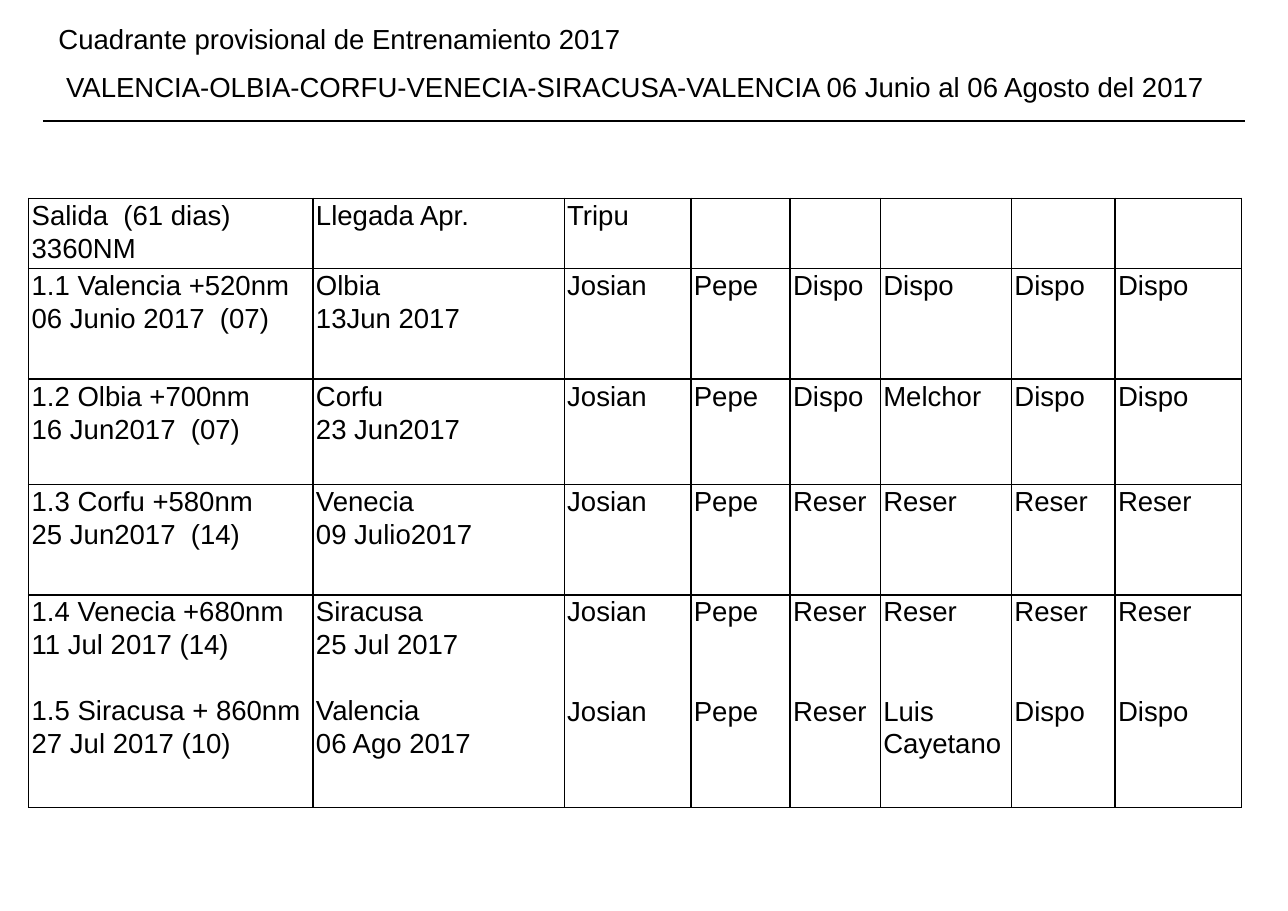
from lxml import etree
from pptx import Presentation
from pptx.dml.color import RGBColor
from pptx.enum.shapes import MSO_CONNECTOR
from pptx.enum.text import MSO_ANCHOR, MSO_AUTO_SIZE, PP_ALIGN
from pptx.oxml.ns import qn
from pptx.util import Pt

TOP, LEFT = MSO_ANCHOR.TOP, PP_ALIGN.LEFT
NO_FIT = MSO_AUTO_SIZE.NONE
STRAIGHT = MSO_CONNECTOR.STRAIGHT

WIDE, HIGH = 841.7, 595.4
BLACK = "000000"
SIZE, SPACING, PITCH = 18, 1.07, 21.6
LEG_LINES = 3

TITLE = ["Cuadrante provisional de Entrenamiento 2017",
         "VALENCIA-OLBIA-CORFU-VENECIA-SIRACUSA-VALENCIA 06 Junio al 06 Agosto del 2017"]
COLS = [185.8, 164.2, 82.8, 64.8, 59, 85.7, 67.7, 82.8]
ROWS = [46.1, 72, 69.1, 72, 139]
# Each table row holds one or more legs; each leg gives the text of its columns.
PLAN = [
    [["Salida  (61 dias)\n3360NM", "Llegada Apr.", "Tripu"]],
    [["1.1 Valencia +520nm 06 Junio 2017  (07)", "Olbia\n13Jun 2017",
      "Josian", "Pepe", "Dispo", "Dispo", "Dispo", "Dispo"]],
    [["1.2 Olbia +700nm\n16 Jun2017  (07)", "Corfu\n23 Jun2017",
      "Josian", "Pepe", "Dispo", "Melchor", "Dispo", "Dispo"]],
    [["1.3 Corfu +580nm\n25 Jun2017  (14)", "Venecia\n09 Julio2017",
      "Josian", "Pepe", "Reser", "Reser", "Reser", "Reser"]],
    [["1.4 Venecia +680nm\n11 Jul 2017 (14)", "Siracusa\n25 Jul 2017",
      "Josian", "Pepe", "Reser", "Reser", "Reser", "Reser"],
     ["1.5 Siracusa + 860nm\n27 Jul 2017 (10)", "Valencia\n06 Ago 2017",
      "Josian", "Pepe", "Reser", "Luis Cayetano", "Dispo", "Dispo"]],
]


def color(code):
    return RGBColor.from_string(code)


def style(para):
    para.line_spacing = SPACING
    for run in para.runs:
        font = run.font
        font.name, font.size = "Arial", Pt(SIZE)
        font.bold = False
        font.color.rgb = color(BLACK)


def add_title(slide, x, y, w, h):
    title = slide.shapes.title
    title.left, title.top, title.width, title.height = Pt(x), Pt(y), Pt(w), Pt(h)
    frame = title.text_frame
    frame.text = "\n".join(TITLE)
    frame.auto_size, frame.vertical_anchor = NO_FIT, TOP
    for para in frame.paragraphs:
        para.alignment = LEFT
        para.space_before, para.space_after = Pt(0), Pt(8)
        style(para)
    frame.paragraphs[1]._p.get_or_add_pPr().set("marL", str(Pt(5)))


def add_rule(slide, x, y, w):
    rule = slide.shapes.add_connector(STRAIGHT, Pt(x), Pt(y), Pt(x + w), Pt(y))
    rule.line.color.rgb, rule.line.width = color(BLACK), Pt(1.5)
    etree.SubElement(rule._element.spPr, qn("a:effectLst"))


def set_border(cell):
    props = cell._tc.get_or_add_tcPr()
    for side in ("lnL", "lnR", "lnT", "lnB"):
        line = etree.SubElement(props, qn(f"a:{side}"), w=str(Pt(1)))
        fill = etree.SubElement(line, qn("a:solidFill"))
        etree.SubElement(fill, qn("a:srgbClr"), val=BLACK)


def fill_cell(cell, legs):
    """Stack the texts of the legs, each starting a fixed number of lines below the last."""
    set_border(cell)
    cell.fill.background()
    cell.margin_left = cell.margin_right = Pt(2)
    cell.margin_top = cell.margin_bottom = Pt(0)
    frame = cell.text_frame
    frame.text = "\n".join(legs)
    for para in frame.paragraphs:
        style(para)
    start = 0
    for leg in legs[:-1]:
        lines = len(leg.split("\n"))
        start += lines
        frame.paragraphs[start].space_before = Pt((LEG_LINES - lines) * PITCH)


def add_plan(slide, x, y):
    table = slide.shapes.add_table(len(ROWS), len(COLS), Pt(x), Pt(y),
                                   Pt(sum(COLS)), Pt(sum(ROWS))).table
    table.first_row = table.horz_banding = False
    for col, width in zip(table.columns, COLS):
        col.width = Pt(width)
    for row, high, legs in zip(table.rows, ROWS, PLAN):
        row.height = Pt(high)
        for i, cell in enumerate(row.cells):
            fill_cell(cell, [leg[i] for leg in legs if i < len(leg)])


def main():
    deck = Presentation()
    deck.slide_width, deck.slide_height = Pt(WIDE), Pt(HIGH)
    slide = deck.slides.add_slide(deck.slide_layouts[5])
    add_rule(slide, 28.1, 79.2, 785.5)
    add_title(slide, 31, 9.4, 797.8, 61.9)
    add_plan(slide, 18.7, 129.6)
    deck.save("out.pptx")


if __name__ == "__main__":
    main()
